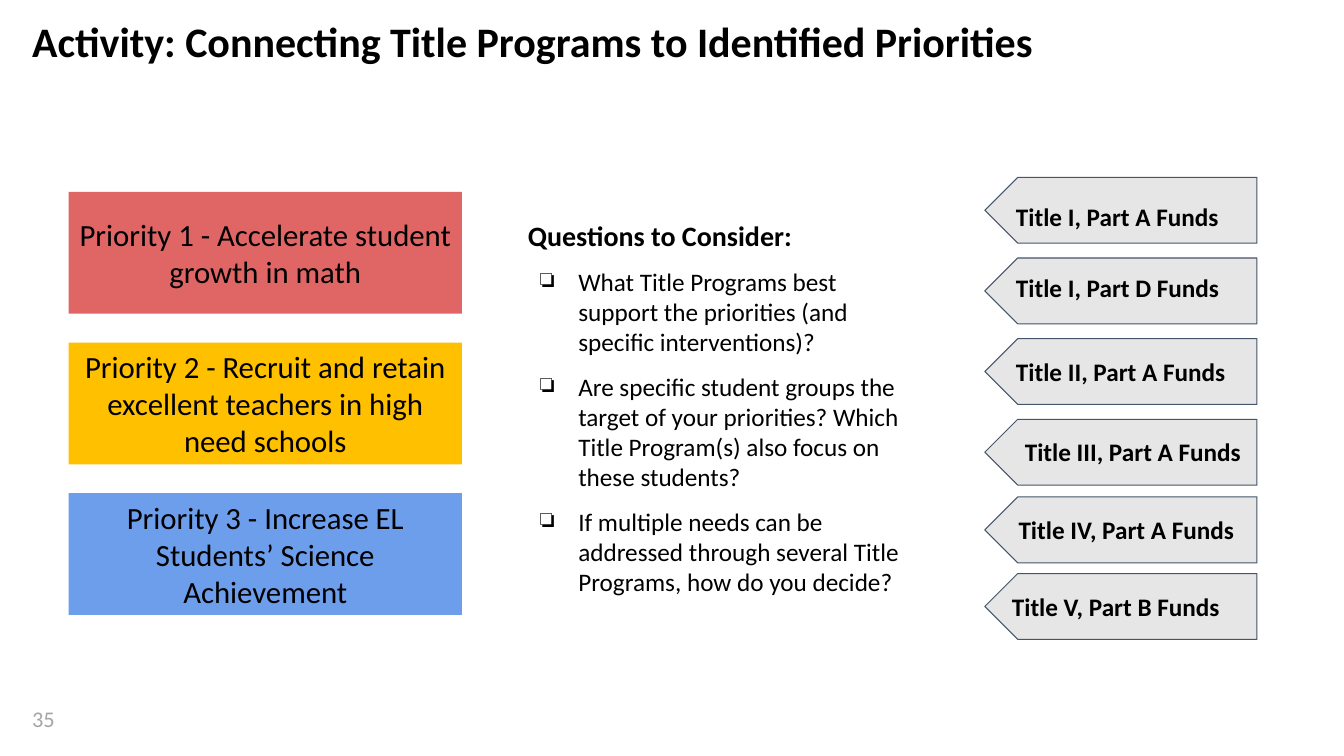
import pptx
import pptx.util
import pptx.dml.color
import pptx.enum.shapes
import pptx.enum.text
import lxml.etree
from dataclasses import dataclass

Pt = pptx.util.Pt
ALIGN = pptx.enum.text.PP_ALIGN
ANCHOR = pptx.enum.text.MSO_ANCHOR
SHAPE = pptx.enum.shapes.MSO_SHAPE

TITLE = "Activity: Connecting Title Programs to Identified Priorities"
SLIDE_NUMBER = "35"
PRIORITIES = [
    ("Priority 1 - Accelerate student growth in math", "E06666"),
    ("Priority 2 - Recruit and retain excellent teachers in high need schools", "FFC000"),
    ("Priority 3 - Increase EL Students’ Science Achievement", "6D9EEB"),
]
QUESTIONS_HEADING = "Questions to Consider:"
QUESTIONS = [
    "What Title Programs best support the priorities (and specific interventions)?",
    "Are specific student groups the target of your priorities? "
    "Which Title Program(s) also focus on these students?",
    "If multiple needs can be addressed through several Title Programs, how do you decide?",
]
# name, arrow top, label left, label top, label width, alignment
FUNDS = [
    ("Title I, Part A Funds", 126.7, 718.6, 136.8, 174.2, ALIGN.LEFT),
    ("Title I, Part D Funds", 184.3, 718.6, 187.2, 174.2, ALIGN.LEFT),
    ("Title II, Part A Funds", 241.9, 718.6, 247, 174.2, ALIGN.LEFT),
    ("Title III, Part A Funds", 299.5, 725, 304.6, 172.8, ALIGN.LEFT),
    ("Title IV, Part A Funds", 355, 715.7, 360, 177.8, ALIGN.CENTER),
    ("Title V, Part B Funds", 409.7, 715.7, 415.4, 174.2, ALIGN.LEFT),
]


@dataclass(frozen=True)
class Theme:
    font: str = "Calibri"
    ink: str = "000000"
    muted: str = "A5A5A5"
    arrow_fill: str = "E7E6E6"
    arrow_line: str = "44546A"
    title_size: float = 30
    priority_size: float = 22
    heading_size: float = 20
    body_size: float = 18
    number_size: float = 16


THEME = Theme()


def color(value):
    return pptx.dml.color.RGBColor.from_string(value)


def apply(target, values):
    for name, value in values.items():
        setattr(target, name, value)


def prepare_frame(shape, anchor=ANCHOR.TOP, horizontal=7.2, vertical=7.2):
    frame = shape.text_frame
    apply(frame, {
        "word_wrap": True, "auto_size": pptx.enum.text.MSO_AUTO_SIZE.NONE,
        "vertical_anchor": anchor,
        "margin_left": Pt(horizontal), "margin_right": Pt(horizontal),
        "margin_top": Pt(vertical), "margin_bottom": Pt(vertical),
    })
    return frame


def write(paragraph, text, size, bold=False, ink=THEME.ink, **layout):
    apply(paragraph, layout)
    run = paragraph.add_run()
    run.text = text
    apply(run.font, {"name": THEME.font, "size": Pt(size), "bold": bold})
    run.font.color.rgb = color(ink)


def add_bullet(paragraph):
    properties = paragraph._p.get_or_add_pPr()
    properties.set("marL", str(Pt(36)))
    properties.set("indent", str(Pt(-27)))
    tag = "{http://schemas.openxmlformats.org/drawingml/2006/main}buChar"
    lxml.etree.SubElement(properties, tag).set("char", "❏")


def add_box(slide, kind, box, fill, line=None):
    shape = slide.shapes.add_shape(kind, *map(Pt, box))
    shape.shadow.inherit = False
    shape.fill.solid()
    shape.fill.fore_color.rgb = color(fill)
    if line:
        shape.line.color.rgb = color(line)
        shape.line.width = Pt(0.75)
    else:
        shape.line.fill.background()
    return shape


def add_text(slide, box, **margins):
    return prepare_frame(slide.shapes.add_textbox(*map(Pt, box)), **margins)


def add_title(slide):
    title = slide.shapes.title
    apply(title, {"left": Pt(23), "top": Pt(15), "width": Pt(854), "height": Pt(56)})
    frame = prepare_frame(title, horizontal=0, vertical=0)
    write(frame.paragraphs[0], TITLE, THEME.title_size, True,
          alignment=ALIGN.LEFT, line_spacing=0.9)


def add_priorities(slide):
    for index, (text, fill) in enumerate(PRIORITIES):
        box = (49, 137 + 107.65 * index, 281, 87)
        shape = add_box(slide, SHAPE.RECTANGLE, box, fill)
        frame = prepare_frame(shape, ANCHOR.MIDDLE)
        write(frame.paragraphs[0], text, THEME.priority_size, alignment=ALIGN.CENTER)


def add_questions(slide):
    frame = add_text(slide, (370, 149, 292.3, 353.5))
    write(frame.paragraphs[0], QUESTIONS_HEADING, THEME.heading_size, True)
    for question in QUESTIONS:
        paragraph = frame.add_paragraph()
        add_bullet(paragraph)
        write(paragraph, question, THEME.body_size, space_before=Pt(10))
    paragraph.space_after = Pt(10)


def add_funds(slide):
    for name, arrow_top, left, top, width, alignment in FUNDS:
        arrow = add_box(slide, SHAPE.PENTAGON, (703.5, arrow_top, 194.4, 47),
                        THEME.arrow_fill, THEME.arrow_line)
        arrow._element.spPr.get_or_add_xfrm().set("flipH", "1")
        arrow.adjustments[0] = 0.5
        frame = add_text(slide, (left, top, width, 36))
        write(frame.paragraphs[0], name, THEME.body_size, True, alignment=alignment)


def main():
    presentation = pptx.Presentation()
    apply(presentation, {"slide_width": Pt(960), "slide_height": Pt(540)})
    slide = presentation.slides.add_slide(presentation.slide_layouts[5])
    add_title(slide)
    number = add_text(slide, (6.5, 500.4, 49, 28.8), vertical=3.6)
    write(number.paragraphs[0], SLIDE_NUMBER, THEME.number_size,
          ink=THEME.muted, alignment=ALIGN.CENTER)
    add_priorities(slide)
    add_questions(slide)
    add_funds(slide)
    presentation.save("out.pptx")


if __name__ == "__main__":
    main()
